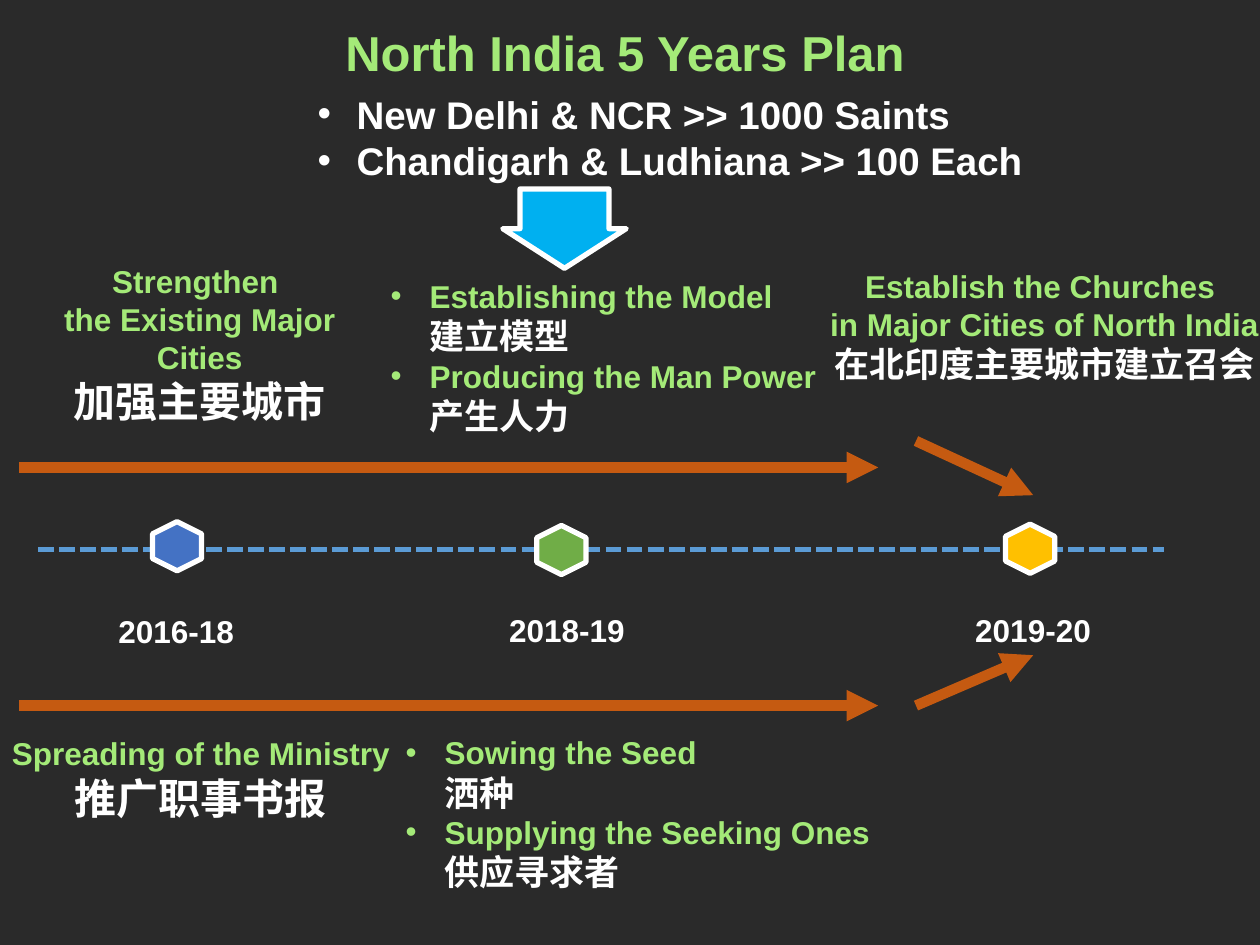
from lxml import etree
from pptx import Presentation
from pptx.dml.color import RGBColor
from pptx.enum.dml import MSO_LINE
from pptx.enum.shapes import MSO_CONNECTOR, MSO_SHAPE
from pptx.enum.text import MSO_AUTO_SIZE, PP_ALIGN
from pptx.oxml.ns import qn
from pptx.util import Inches, Pt

CELL = Inches(0.1)  # the slide is a grid of 100 columns by 75 rows
COLUMNS, ROWS = 100, 75
LEFT, CENTER = PP_ALIGN.LEFT, PP_ALIGN.CENTER
HEXAGON, DOWN_ARROW = MSO_SHAPE.HEXAGON, MSO_SHAPE.DOWN_ARROW
STRAIGHT, DASH = MSO_CONNECTOR.STRAIGHT, MSO_LINE.SQUARE_DOT
FIT_TEXT = MSO_AUTO_SIZE.SHAPE_TO_FIT_TEXT
LATIN, CHINESE = "Arial", "Noto Sans CJK SC"
GREEN, WHITE, ORANGE, BLUE = "A4EA78", "FFFFFF", "C55A11", "5B9BD5"
BULLET_INDENT = Inches(0.31)

color = RGBColor.from_string


def add_text(place, paragraphs, align=LEFT, wrap=False, bullet=False):
    """Each paragraph is a list of lines, each line (text, size, font, colour)."""
    box = slide.shapes.add_textbox(*[int(cells * CELL) for cells in place])
    frame = box.text_frame
    frame.word_wrap = wrap
    frame.auto_size = FIT_TEXT
    frame.margin_left = frame.margin_right = Inches(0.05)
    frame.margin_top = frame.margin_bottom = Inches(0.05)
    for index, lines in enumerate(paragraphs):
        paragraph = frame.add_paragraph() if index else frame.paragraphs[0]
        paragraph.alignment = align
        if bullet:
            properties = paragraph._p.get_or_add_pPr()
            properties.set("marL", str(BULLET_INDENT))
            properties.set("indent", str(-BULLET_INDENT))
            etree.SubElement(properties, qn("a:buFont")).set("typeface", LATIN)
            etree.SubElement(properties, qn("a:buChar")).set("char", "•")
        for number, (text, size, font, fill) in enumerate(lines):
            if number:
                paragraph.add_line_break()
            run = paragraph.add_run()
            run.text = text
            run.font.size = Pt(size)
            run.font.bold = True
            run.font.name = font
            run.font.color.rgb = color(fill)
            east_asian = etree.SubElement(run._r.get_or_add_rPr(), qn("a:ea"))
            east_asian.set("typeface", font)


def add_line(parent, ends, fill, width):
    line = parent.shapes.add_connector(STRAIGHT, *[int(cells * CELL) for cells in ends])
    line.line.color.rgb = color(fill)
    line.line.width = Pt(width)
    etree.SubElement(line._element.spPr, qn("a:effectLst"))
    return line


presentation = Presentation()
presentation.slide_width = COLUMNS * CELL
presentation.slide_height = ROWS * CELL
slide = presentation.slides.add_slide(presentation.slide_layouts[6])
slide.background.fill.solid()
slide.background.fill.fore_color.rgb = color("2A2A2A")

# Title and goals
add_text((-0.8, 1.3, 100.8, 5.7), [[("North India 5 Years Plan", 28, LATIN, GREEN)]],
         CENTER, wrap=True)
goals = ["New Delhi & NCR >> 1000 Saints", "Chandigarh & Ludhiana >> 100 Each"]
add_text((24.7, 6.7, 57.8, 8.4), [[(goal, 22, LATIN, WHITE)] for goal in goals], bullet=True)

# Centred stage headings
add_text((1.8, 20.3, 28.1, 14.1),
         [[("Strengthen ", 18, LATIN, GREEN), ("the Existing Major Cities", 18, LATIN, GREEN)],
          [("加强主要城市", 24, CHINESE, WHITE)]], CENTER, wrap=True)
add_text((0.3, 57.8, 31.3, 8.1),
         [[("Spreading of the Ministry", 18, LATIN, GREEN)],
          [("推广职事书报", 24, CHINESE, WHITE)]], CENTER)
add_text((65.2, 20.7, 35.4, 10.4),
         [[("Establish the Churches ", 18, LATIN, GREEN),
           ("in Major Cities of North India", 18, LATIN, GREEN),
           ("在北印度主要城市建立召会", 20, CHINESE, WHITE)]], CENTER)

# Bilingual bullet lists
bullet_lists = [
    ((30.5, 21.5, 35.2, 13.8), False,
     [("Establishing the Model", "建立模型"), ("Producing the Man Power", "产生人力")]),
    ((31.7, 57.7, 38.3, 13.8), True,
     [("Sowing the Seed", "洒种"), ("Supplying the Seeking Ones", "供应寻求者")]),
]
for place, wrap, items in bullet_lists:
    add_text(place, [[(english, 18, LATIN, GREEN), (chinese, 20, CHINESE, WHITE)]
                     for english, chinese in items], wrap=wrap, bullet=True)

# Timeline with its milestones, and the arrow under the goals
timeline = slide.shapes.add_group_shape()
add_line(timeline, (3, 43.6, 92.4, 43.6), BLUE, 3).line.dash_style = DASH
outlined_shapes = [
    (timeline, HEXAGON, (12.1, 41.4, 3.9, 3.9), "4472C4"),
    (timeline, HEXAGON, (42.6, 41.7, 3.9, 3.9), "70AD47"),
    (timeline, HEXAGON, (79.8, 41.6, 3.9, 3.9), "FFC000"),
    (slide, DOWN_ARROW, (39.9, 15, 9.8, 6.3), "00B0F0"),
]
for parent, preset, place, fill in outlined_shapes:
    shape = parent.shapes.add_shape(preset, *[int(cells * CELL) for cells in place])
    shape.shadow.inherit = False
    shape.fill.solid()
    shape.fill.fore_color.rgb = color(fill)
    shape.line.color.rgb = color(WHITE)
    shape.line.width = Pt(3)
    if preset == HEXAGON:
        shape.rotation = 90
    else:
        shape.adjustments[0] = 0.72
        shape.adjustments[1] = 0.5

for left, top, years in [(8.9, 48.1, "2016-18"), (39.9, 48, "2018-19"), (76.9, 48, "2019-20")]:
    add_text((left, top, 10.3, 4), [[(years, 18, LATIN, WHITE)]])

# Progress arrows above and below the timeline
arrows = [(72.7, 56, 82, 52), (72.7, 35, 82, 39.3), (1.5, 56, 69.7, 56), (1.5, 37.1, 69.7, 37.1)]
for ends in arrows:
    arrow = add_line(slide, ends, ORANGE, 6)
    etree.SubElement(arrow.line._get_or_add_ln(), qn("a:tailEnd")).set("type", "triangle")

presentation.save("out.pptx")
